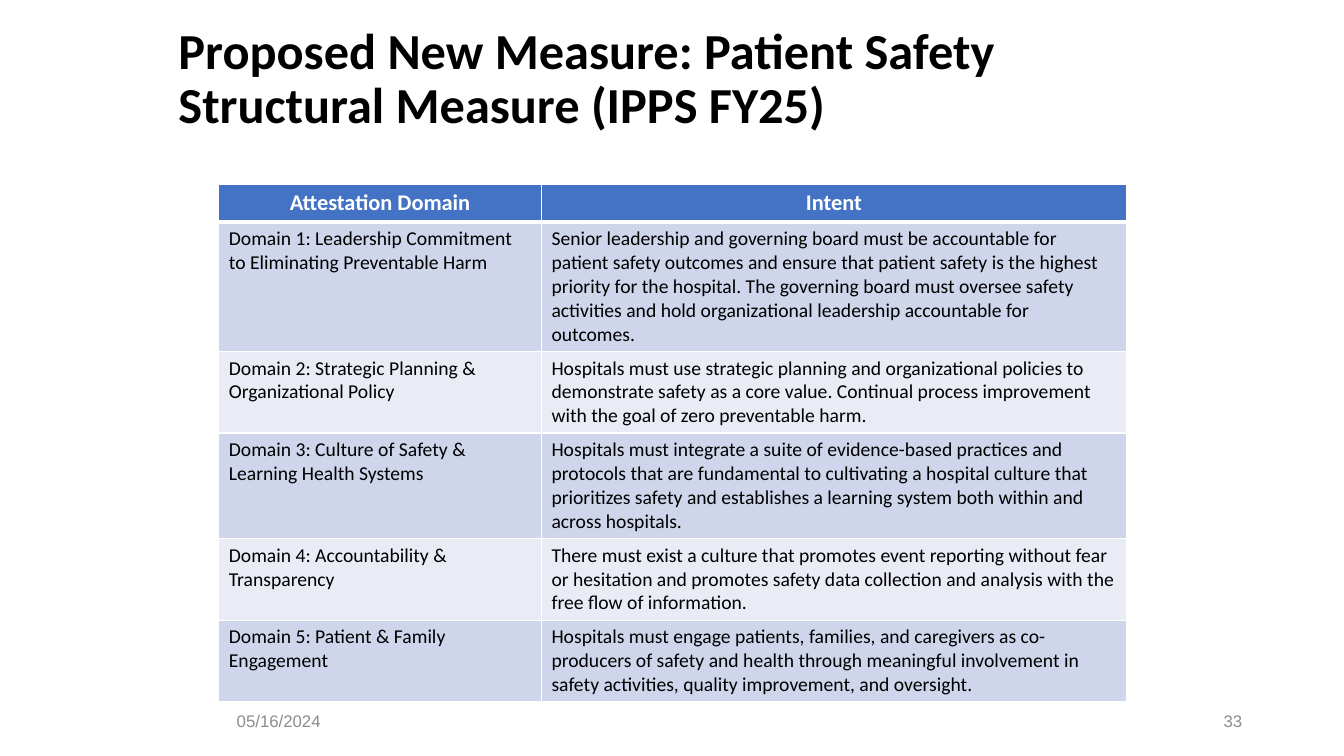
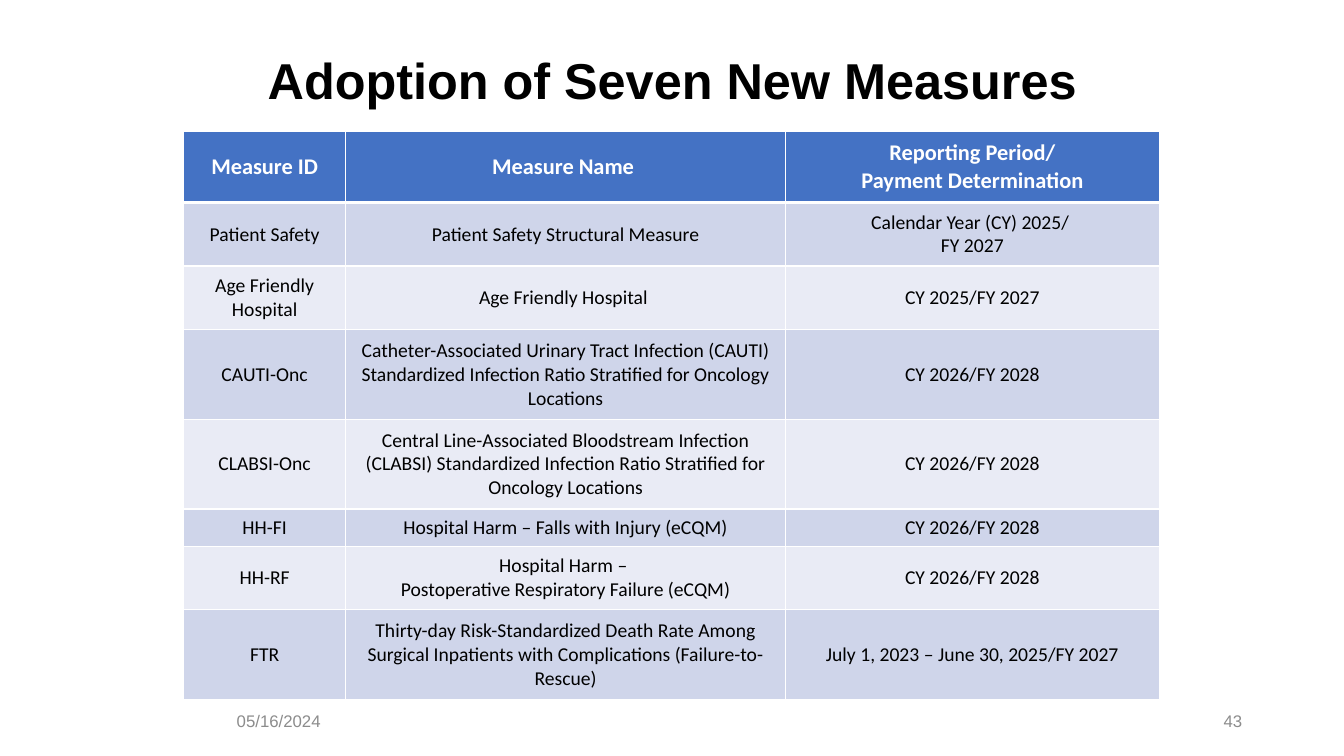
from copy import deepcopy
from dataclasses import dataclass

from pptx import Presentation
from pptx.dml.color import RGBColor
from pptx.enum.text import MSO_ANCHOR as Anchor, MSO_AUTO_SIZE as AutoSize, PP_ALIGN as Align
from pptx.oxml import parse_xml
from pptx.oxml.ns import nsdecls, qn
from pptx.slide import Slide
from pptx.table import _Cell as Cell
from pptx.text.text import TextFrame
from pptx.util import Inches, Pt


# Theme
@dataclass(frozen=True)
class Theme:
    text: str = "000000"
    white: str = "FFFFFF"
    header: str = "4472C4"
    bands: tuple[str, str] = ("CFD5EA", "E9EBF5")
    footer: str = "8C8C8C"
    sans: str = "Arial"
    body: str = "Calibri"
    title_size: int = 36
    header_size: int = 16
    cell_size: int = 14
    footer_size: int = 12
    rule: float = 1
    header_rule: float = 3


THEME = Theme()
TITLE_ONLY = 5
DATE = "05/16/2024"


@dataclass(frozen=True)
class Box:
    left: float
    top: float
    width: float
    height: float

    def lengths(self) -> tuple[Inches, ...]:
        return tuple(Inches(n) for n in (self.left, self.top, self.width, self.height))


@dataclass(frozen=True)
class Heading:
    text: str
    box: Box
    font: str
    align: Align


@dataclass(frozen=True)
class Grid:
    left: float
    top: float
    columns: tuple[float, ...]
    heights: tuple[float, ...]
    rows: tuple[tuple[str, ...], ...]
    align: Align
    anchor: Anchor


@dataclass(frozen=True)
class TablePage:
    number: int
    heading: Heading
    grid: Grid


# Drawing
def write(frame: TextFrame, text: str, *, size: float, color: str, font: str,
          bold: bool = False, align: Align = Align.LEFT, spacing: float = 1.0) -> None:
    """Fill a frame with one formatted paragraph; a newline is a line break."""
    frame.word_wrap = True
    para = frame.paragraphs[0]
    para.text = text
    para.alignment = align
    para.line_spacing = spacing
    for span in para.runs:
        span.font.size = Pt(size)
        span.font.name = font
        span.font.bold = bold
        span.font.color.rgb = RGBColor.from_string(color)
    # Line breaks take the format of the words around them
    for line_break in para._p.findall(qn("a:br")):
        line_break.insert(0, deepcopy(para.runs[0]._r.rPr))


def add_heading(page: Slide, heading: Heading) -> None:
    title = page.shapes.title
    title.left, title.top, title.width, title.height = heading.box.lengths()
    frame = title.text_frame
    frame.auto_size = AutoSize.NONE
    frame.vertical_anchor = Anchor.MIDDLE
    write(frame, heading.text, size=THEME.title_size, color=THEME.text,
          font=heading.font, bold=True, align=heading.align, spacing=0.9)


def add_footer(page: Slide, number: int) -> None:
    for text, box, align in (
        (DATE, Box(2.25, 6.95, 1.67, 0.4), Align.LEFT),
        (str(number), Box(9.42, 6.95, 3, 0.4), Align.RIGHT),
    ):
        frame = page.shapes.add_textbox(*box.lengths()).text_frame
        frame.vertical_anchor = Anchor.MIDDLE
        write(frame, text, size=THEME.footer_size, color=THEME.footer,
              font=THEME.sans, align=align)


def paint_cell(cell: Cell, fill: str, *, top: float, bottom: float) -> None:
    """Draw the four white rules of a cell, then its fill."""
    properties = cell._tc.get_or_add_tcPr()
    widths = {"lnL": THEME.rule, "lnR": THEME.rule, "lnT": top, "lnB": bottom}
    for side, width in widths.items():
        properties.append(parse_xml(
            f'<a:{side} {nsdecls("a")} w="{Pt(width)}"><a:solidFill>'
            f'<a:srgbClr val="{THEME.white}"/></a:solidFill></a:{side}>'))
    cell.fill.solid()
    cell.fill.fore_color.rgb = RGBColor.from_string(fill)


def add_grid(page: Slide, grid: Grid) -> None:
    box = Box(grid.left, grid.top, sum(grid.columns), sum(grid.heights))
    table = page.shapes.add_table(
        len(grid.rows), len(grid.columns), *box.lengths()).table
    for column, width in zip(table.columns, grid.columns):
        column.width = Inches(width)
    for index, (row, height, texts) in enumerate(zip(table.rows, grid.heights, grid.rows)):
        row.height = Inches(height)
        is_header = index == 0
        fill = THEME.header if is_header else THEME.bands[(index - 1) % 2]
        for cell, text in zip(row.cells, texts):
            paint_cell(cell, fill,
                       top=THEME.header_rule if index == 1 else THEME.rule,
                       bottom=THEME.header_rule if is_header else THEME.rule)
            cell.vertical_anchor = grid.anchor
            write(cell.text_frame, text, font=THEME.body, bold=is_header,
                  size=THEME.header_size if is_header else THEME.cell_size,
                  color=THEME.white if is_header else THEME.text,
                  align=Align.CENTER if is_header else grid.align)


# Content
PAGES = (
    TablePage(
        33,
        Heading("Proposed New Measure: Patient Safety Structural Measure (IPPS FY25)",
                Box(1.67, 0.17, 10, 1.25), THEME.body, Align.LEFT),
        Grid(
            2.17, 1.83, (3.2, 5.8), (0.37, 1.28, 0.81, 1.04, 0.81, 0.81),
            (
                ("Attestation Domain", "Intent"),
                ("Domain 1: Leadership Commitment to Eliminating Preventable Harm",
                 "Senior leadership and governing board must be accountable for patient "
                 "safety outcomes and ensure that patient safety is the highest priority "
                 "for the hospital. The governing board must oversee safety activities and "
                 "hold organizational leadership accountable for outcomes."),
                ("Domain 2: Strategic Planning & Organizational Policy",
                 "Hospitals must use strategic planning and organizational policies to "
                 "demonstrate safety as a core value. Continual process improvement with "
                 "the goal of zero preventable harm."),
                ("Domain 3: Culture of Safety & Learning Health Systems",
                 "Hospitals must integrate a suite of evidence-based practices and "
                 "protocols that are fundamental to cultivating a hospital culture that "
                 "prioritizes safety and establishes a learning system both within and "
                 "across hospitals."),
                ("Domain 4: Accountability & Transparency",
                 "There must exist a culture that promotes event reporting without fear or "
                 "hesitation and promotes safety data collection and analysis with the "
                 "free flow of information."),
                ("Domain 5: Patient & Family Engagement",
                 "Hospitals must engage patients, families, and caregivers as co-producers "
                 "of safety and health through meaningful involvement in safety "
                 "activities, quality improvement, and oversight."),
            ),
            Align.LEFT, Anchor.TOP),
    ),
    TablePage(
        43,
        Heading("Adoption of Seven New Measures",
                Box(0.92, 0.22, 11.5, 1.21), THEME.sans, Align.CENTER),
        Grid(
            1.82, 1.3, (1.61, 4.36, 3.71),
            (0.71, 0.63, 0.63, 0.89, 0.89, 0.37, 0.63, 0.89),
            (
                ("Measure ID", "Measure Name ", "Reporting Period/\nPayment Determination"),
                ("Patient Safety", "Patient Safety Structural Measure",
                 "Calendar Year (CY) 2025/ \nFY 2027"),
                ("Age Friendly Hospital", "Age Friendly Hospital ", "CY 2025/FY 2027"),
                ("CAUTI-Onc",
                 "Catheter-Associated Urinary Tract Infection (CAUTI) Standardized "
                 "Infection Ratio Stratified for Oncology Locations",
                 "CY 2026/FY 2028"),
                ("CLABSI-Onc",
                 "Central Line-Associated Bloodstream Infection (CLABSI) Standardized "
                 "Infection Ratio Stratified for Oncology Locations",
                 "CY 2026/FY 2028"),
                ("HH-FI", "Hospital Harm – Falls with Injury (eCQM)", "CY 2026/FY 2028"),
                ("HH-RF", "Hospital Harm – \nPostoperative Respiratory Failure (eCQM)",
                 "CY 2026/FY 2028"),
                ("FTR",
                 "Thirty-day Risk-Standardized Death Rate Among Surgical Inpatients with "
                 "Complications (Failure-to-Rescue)",
                 "July 1, 2023 – June 30, 2025/FY 2027"),
            ),
            Align.CENTER, Anchor.MIDDLE),
    ),
)


def main() -> None:
    deck = Presentation()
    deck.slide_width, deck.slide_height = Inches(13.33), Inches(7.5)
    for content in PAGES:
        page = deck.slides.add_slide(deck.slide_layouts[TITLE_ONLY])
        add_heading(page, content.heading)
        add_grid(page, content.grid)
        add_footer(page, content.number)
    deck.save("out.pptx")


if __name__ == "__main__":
    main()
